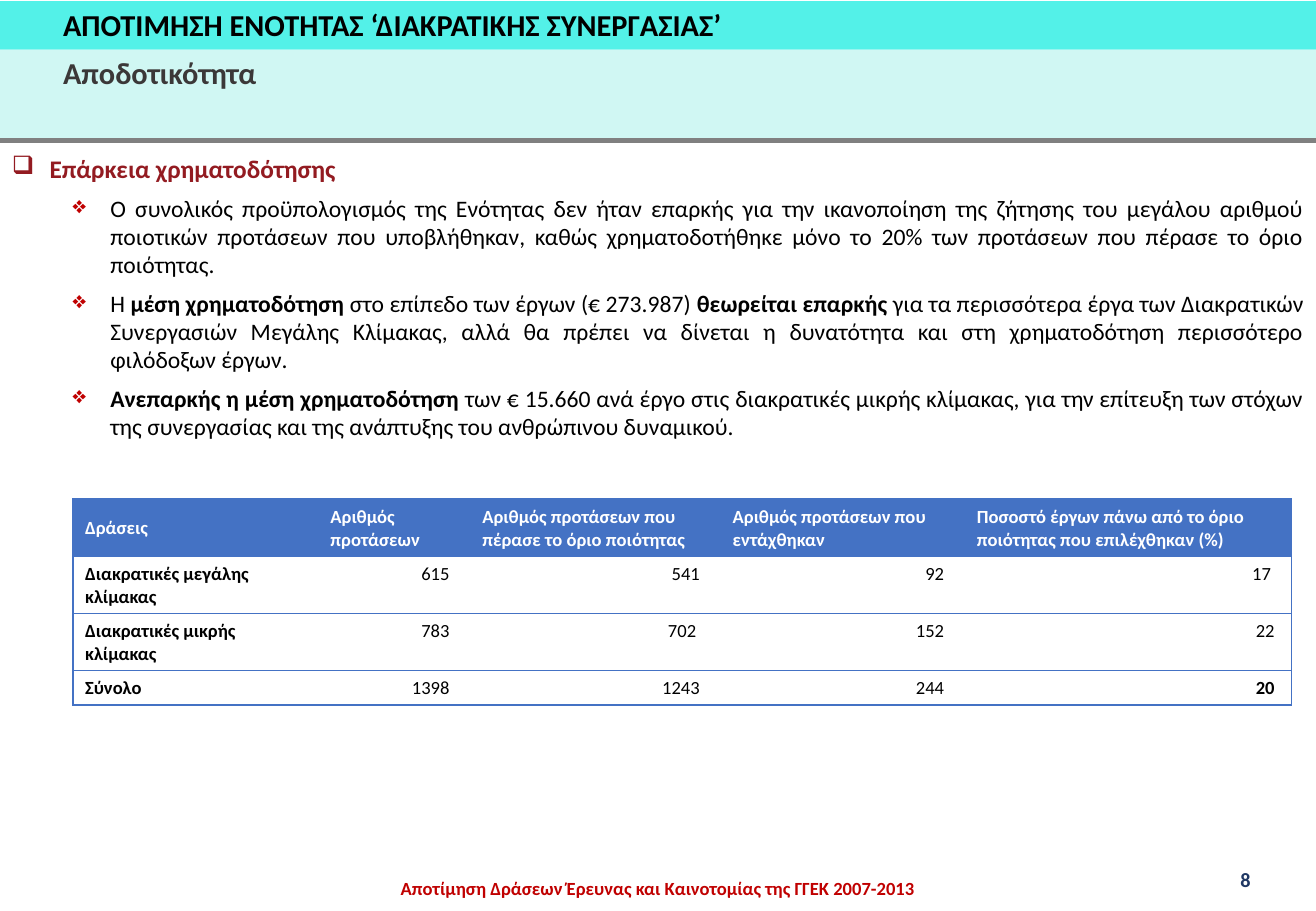
from lxml.etree import SubElement
from pptx import Presentation
from pptx.dml.color import RGBColor
from pptx.enum.shapes import MSO_CONNECTOR, MSO_SHAPE
from pptx.enum.text import MSO_ANCHOR, MSO_AUTO_SIZE, PP_ALIGN
from pptx.oxml.ns import qn
from pptx.util import Inches, Pt

COLORS = {
    "title_band": "53F1E8", "subtitle_band": "D0F7F3", "rule": "808080",
    "black": "000000", "white": "FFFFFF", "subtitle": "3B3838",
    "heading": "931B21", "red": "C00000", "page": "203864", "table": "4472C4",
}

FOOTER = "Aποτίμηση Δράσεων Έρευνας και Καινοτομίας της ΓΓΕΚ 2007-2013"

# Each point is a list of (text, bold) runs.
POINTS = [
    [("Ο συνολικός προϋπολογισμός της Ενότητας δεν ήταν επαρκής για την ικανοποίηση "
      "της ζήτησης του μεγάλου αριθμού ποιοτικών προτάσεων που υποβλήθηκαν, καθώς "
      "χρηματοδοτήθηκε μόνο το 20% των προτάσεων που πέρασε το όριο ποιότητας.", False)],
    [("Η ", False),
     ("μέση χρηματοδότηση ", True),
     ("στο επίπεδο των έργων (€ 273.987) ", False),
     ("θεωρείται επαρκής ", True),
     ("για τα περισσότερα έργα των Διακρατικών Συνεργασιών Μεγάλης Κλίμακας, αλλά θα "
      "πρέπει να δίνεται η δυνατότητα και στη χρηματοδότηση περισσότερο φιλόδοξων "
      "έργων.", False)],
    [("Ανεπαρκής η μέση χρηματοδότηση ", True),
     ("των € 15.660 ανά έργο στις διακρατικές μικρής κλίμακας, για την επίτευξη των "
      "στόχων της συνεργασίας και της ανάπτυξης του ανθρώπινου δυναμικού.", False)],
]

ACTIONS = [
    ["Δράσεις", "Αριθμός προτάσεων", "Αριθμός προτάσεων που πέρασε το όριο ποιότητας",
     "Αριθμός προτάσεων που εντάχθηκαν",
     "Ποσοστό έργων πάνω από το όριο ποιότητας που επιλέχθηκαν (%)"],
    ["Διακρατικές μεγάλης κλίμακας", "615", "541", "92", "17"],
    ["Διακρατικές μικρής κλίμακας", "783", "702", "152", "22"],
    ["Σύνολο", "1398", "1243", "244", "20"],
]
COLUMN_WIDTHS = [2.02, 1.25, 2.06, 2.01, 2.69]
ROW_HEIGHTS = [0.47, 0.47, 0.47, 0.28]
NUMBER_MARGIN = 0.17
NUMBER_MARGINS = {(2, 2): 0.2, (2, 4): 0.14, (3, 4): 0.14}
NO_TABLE_STYLE = "{2D5ABB26-0587-4C30-8999-92F81FD0307C}"


def rgb(color):
    return RGBColor.from_string(COLORS[color])


def apply(target, values):
    for attribute, value in values.items():
        setattr(target, attribute, value)


class SlideBuilder:
    font = "Calibri"

    def __init__(self, slide):
        self.slide = slide

    def band(self, top, height, color):
        band = self.slide.shapes.add_shape(
            MSO_SHAPE.RECTANGLE, 0, Inches(top), Inches(10.83), Inches(height))
        band.shadow.inherit = False
        band.fill.solid()
        band.fill.fore_color.rgb = rgb(color)
        band.line.fill.background()

    def rule(self, top, color, weight):
        rule = self.slide.shapes.add_connector(
            MSO_CONNECTOR.STRAIGHT, 0, Inches(top), Inches(10.83), Inches(top))
        rule.line.color.rgb = rgb(color)
        rule.line.width = Pt(weight)
        SubElement(rule._element.spPr, qn("a:effectLst"))

    def frame(self, left, top, width, height, **values):
        frame = self.slide.shapes.add_textbox(
            Inches(left), Inches(top), Inches(width), Inches(height)).text_frame
        apply(frame, {"word_wrap": True,
                      "auto_size": MSO_AUTO_SIZE.SHAPE_TO_FIT_TEXT, **values})
        return frame

    def add_text(self, paragraph, text, size, color, bold=True):
        run = paragraph.add_run()
        run.text = text
        apply(run.font, {"name": self.font, "size": Pt(size), "bold": bold})
        run.font.color.rgb = rgb(color)

    def bullet(self, paragraph, mark, color, indent, level=0):
        apply(paragraph, {"alignment": PP_ALIGN.JUSTIFY, "level": level,
                          "space_after": Pt(6)})
        properties = paragraph._p.get_or_add_pPr()
        properties.set("marL", str(Inches(indent)))
        properties.set("indent", str(Inches(-0.31)))
        bullet_color = SubElement(properties, qn("a:buClr"))
        SubElement(bullet_color, qn("a:srgbClr"), val=COLORS[color])
        SubElement(properties, qn("a:buChar"), char=mark)

    def border(self, cell, sides):
        """Draw one-point lines on the given sides, in the order L, R, T, B."""
        for side in sides:
            line = SubElement(cell._tc.get_or_add_tcPr(), qn(f"a:ln{side}"),
                              w=str(Pt(1)))
            fill = SubElement(line, qn("a:solidFill"))
            SubElement(fill, qn("a:srgbClr"), val=COLORS["table"])

    def table(self, left, top, rows):
        table = self.slide.shapes.add_table(
            len(rows), len(rows[0]), Inches(left), Inches(top),
            Inches(sum(COLUMN_WIDTHS)), Inches(sum(ROW_HEIGHTS))).table
        table._tbl.tblPr.find(qn("a:tableStyleId")).text = NO_TABLE_STYLE
        for column, width in zip(table.columns, COLUMN_WIDTHS):
            column.width = Inches(width)
        for row, height in zip(table.rows, ROW_HEIGHTS):
            row.height = Inches(height)
        last_column = len(COLUMN_WIDTHS) - 1
        for r, row in enumerate(rows):
            for c, text in enumerate(row):
                cell = table.cell(r, c)
                self.border(cell, {0: "LTB", last_column: "RTB"}.get(c, "TB"))
                header = r == 0
                cell.fill.solid()
                cell.fill.fore_color.rgb = rgb("table" if header else "white")
                if header:
                    cell.vertical_anchor = MSO_ANCHOR.MIDDLE
                paragraph = cell.text_frame.paragraphs[0]
                if not header and c > 0:
                    paragraph.alignment = PP_ALIGN.RIGHT
                    margin = NUMBER_MARGINS.get((r, c), NUMBER_MARGIN)
                    cell.margin_right = Inches(margin)
                total_share = r == len(rows) - 1 and c == last_column
                self.add_text(paragraph, text, 11, "white" if header else "black",
                              header or c == 0 or total_share)


def main():
    presentation = Presentation()
    apply(presentation, {"slide_width": Inches(10.83), "slide_height": Inches(7.5)})
    builder = SlideBuilder(presentation.slides.add_slide(presentation.slide_layouts[6]))

    footer = builder.frame(2.82, 7.05, 5.19, 0.38, auto_size=MSO_AUTO_SIZE.NONE,
                           margin_left=0, margin_right=0, margin_top=0, margin_bottom=0)
    apply(footer.paragraphs[0], {"alignment": PP_ALIGN.CENTER, "line_spacing": Pt(25.3)})
    builder.add_text(footer.paragraphs[0], FOOTER, 11, "red")
    page = builder.frame(10.11, 7.09, 0.52, 0.3)
    builder.add_text(page.paragraphs[0], "8", 12, "page")

    builder.band(0.01, 0.4, "title_band")
    builder.band(0.41, 0.75, "subtitle_band")
    builder.rule(1.16, "rule", 3)
    title = builder.frame(0.42, 0, 5.68, 0.4, word_wrap=False)
    builder.add_text(title.paragraphs[0], "ΑΠΟΤΙΜΗΣΗ ΕΝΟΤΗΤΑΣ ‘ΔΙΑΚΡΑΤΙΚΗΣ ΣΥΝΕΡΓΑΣΙΑΣ’",
                     18, "black")
    subtitle = builder.frame(0.42, 0.4, 1.81, 0.4, word_wrap=False)
    builder.add_text(subtitle.paragraphs[0], "Αποδοτικότητα", 18, "subtitle")

    body = builder.frame(0, 1.21, 10.83, 2.49)
    heading = body.paragraphs[0]
    builder.bullet(heading, "❑", "heading", 0.31)
    builder.add_text(heading, "Επάρκεια χρηματοδότησης", 15, "heading")
    for runs in POINTS:
        point = body.add_paragraph()
        builder.bullet(point, "❖", "red", 0.81, level=1)
        for text, bold in runs:
            builder.add_text(point, text, 14, "black", bold)

    builder.table(0.6, 4.11, ACTIONS)
    presentation.save("out.pptx")


if __name__ == "__main__":
    main()
